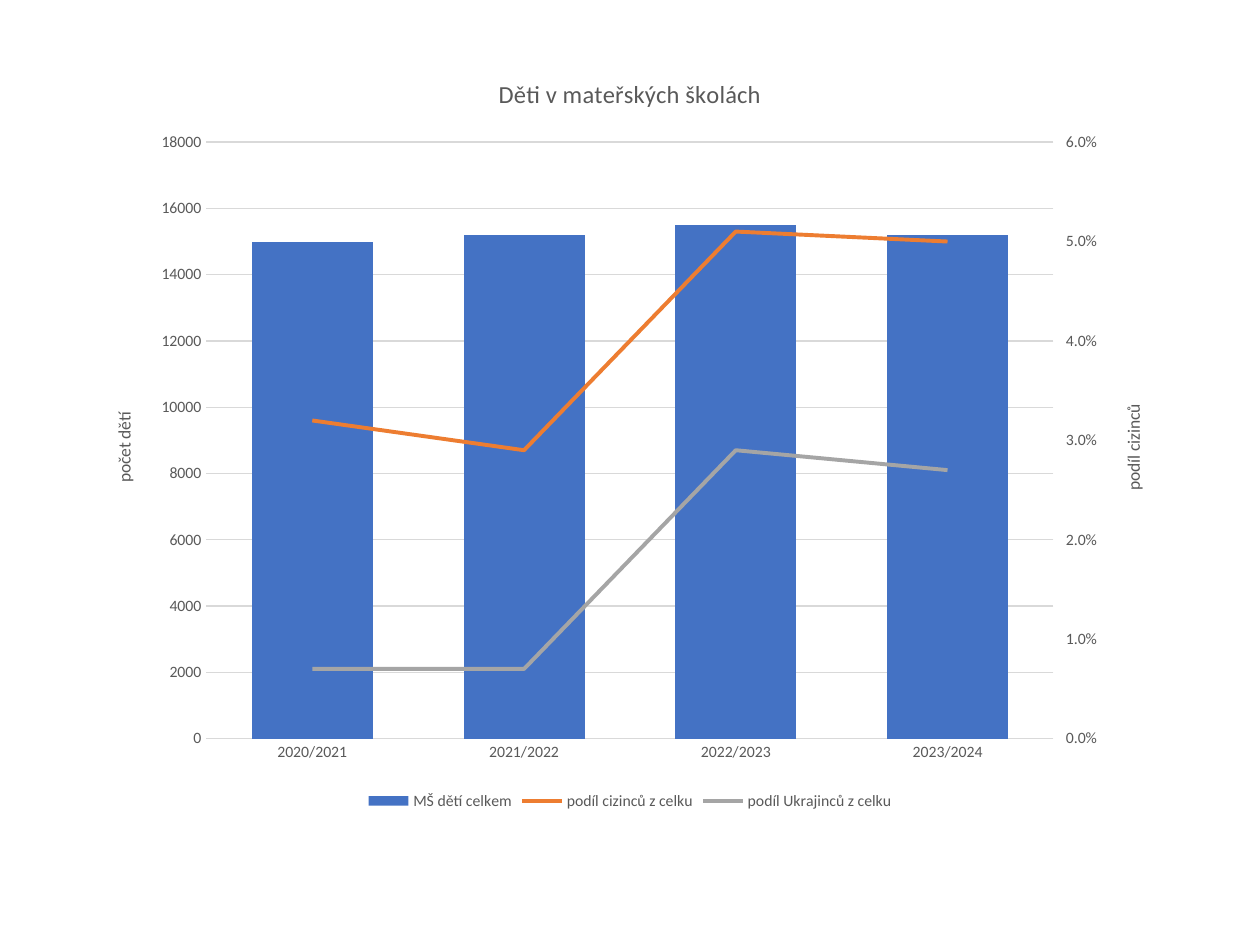
import copy

import pptx
import pptx.chart.axis
import pptx.chart.data
import pptx.dml.color
import pptx.enum.chart
import pptx.oxml
import pptx.oxml.ns
import pptx.util

Pt = pptx.util.Pt
qn = pptx.oxml.ns.qn
Tick = pptx.enum.chart.XL_TICK_MARK

SCHOOL_YEARS = ["2020/2021", "2021/2022", "2022/2023", "2023/2024"]
CHILDREN = ("MŠ dětí celkem", [15000, 15200, 15500, 15200], "4472C4")
SHARES = [
    ("podíl cizinců z celku", [0.032, 0.029, 0.051, 0.05], "ED7D31"),
    ("podíl Ukrajinců z celku", [0.007, 0.007, 0.029, 0.027], "A5A5A5"),
]


def rgb(hex_color):
    return pptx.dml.color.RGBColor.from_string(hex_color)


def chart_xml(tag, body):
    namespace = pptx.oxml.ns.nsdecls("c")
    return pptx.oxml.parse_xml(f"<c:{tag} {namespace}>{body}</c:{tag}>")


class ChartSlide:
    font_name = "Calibri"
    text_color = "595959"
    grid_color = "D9D9D9"

    def __init__(self, presentation):
        self.slide = presentation.slides.add_slide(presentation.slide_layouts[6])

    def style_font(self, font, size):
        font.name = self.font_name
        font.size = Pt(size)
        font.bold = False
        font.color.rgb = rgb(self.text_color)

    def style_line(self, line, color, width):
        line.color.rgb = rgb(color)
        line.width = Pt(width)

    def set_title(self, title, text, size):
        title.text_frame.text = text
        self.style_font(title.text_frame.paragraphs[0].runs[0].font, size)

    def style_value_axis(self, axis, title, maximum, step, number_format, tick):
        self.set_title(axis.axis_title, title, 10)
        body = axis.axis_title._element.find(".//" + qn("a:bodyPr"))
        body.set("rot", "-5400000")
        body.set("vert", "horz")
        axis.minimum_scale, axis.maximum_scale = 0, maximum
        axis.major_unit = step
        axis.major_tick_mark, axis.minor_tick_mark = tick, Tick.NONE
        axis.tick_labels.number_format = number_format
        axis.tick_labels.number_format_is_linked = False
        self.style_font(axis.tick_labels.font, 9)
        axis.format.line.fill.background()

    def add_children_chart(self, left, top, width, height):
        data = pptx.chart.data.CategoryChartData()
        data.categories = SCHOOL_YEARS
        data.add_series(*CHILDREN[:2], number_format="General")
        for name, values, _ in SHARES:
            data.add_series(name, values, number_format="0.0%")
        chart = self.slide.shapes.add_chart(
            pptx.enum.chart.XL_CHART_TYPE.COLUMN_CLUSTERED,
            Pt(left), Pt(top), Pt(width), Pt(height), data,
        ).chart
        self.style_font(chart.font, 10)
        self.set_title(chart.chart_title, "Děti v mateřských školách", 14)
        chart.has_legend = True
        chart.legend.position = pptx.enum.chart.XL_LEGEND_POSITION.BOTTOM
        chart.legend.include_in_layout = False
        self.style_font(chart.legend.font, 9)

        years_axis = chart.category_axis
        years_axis.major_tick_mark = years_axis.minor_tick_mark = Tick.NONE
        self.style_font(years_axis.tick_labels.font, 9)
        self.style_line(years_axis.format.line, self.grid_color, 0.75)

        count_axis = chart.value_axis
        self.style_value_axis(count_axis, "počet dětí", 18000, 2000, "General", Tick.NONE)
        self.style_line(count_axis.major_gridlines.format.line, self.grid_color, 0.75)

        columns = chart.plots[0]
        columns.gap_width, columns.overlap = 75, -25
        columns.vary_by_categories = False
        fill = columns.series[0].format.fill
        fill.solid()
        fill.fore_color.rgb = rgb(CHILDREN[2])

        self.move_shares_to_right_axis(chart)
        self.place_plot_area(chart, 0.11, 0.12, 0.78, 0.78)

    def move_shares_to_right_axis(self, chart):
        """Turn every series after the first into a line on a second value axis."""
        columns = chart.plots[0]._element
        lines = chart_xml("lineChart", '<c:grouping val="standard"/><c:varyColors val="0"/>')
        for series in columns.findall(qn("c:ser"))[1:]:
            for invert in series.findall(qn("c:invertIfNegative")):
                series.remove(invert)
            lines.append(series)
        years_id, share_id = "50001", "50002"
        for tag, value in (("marker", "1"), ("axId", years_id), ("axId", share_id)):
            mark = chart_xml(tag, "")
            mark.set("val", value)
            lines.append(mark)
        columns.addnext(lines)

        count_element = chart.value_axis._element
        share_element = copy.deepcopy(count_element)
        years_element = copy.deepcopy(chart.category_axis._element)
        count_element.addnext(share_element)
        share_element.addnext(years_element)
        for element, own_id, cross_id in (
            (share_element, share_id, years_id),
            (years_element, years_id, share_id),
        ):
            element.find(qn("c:axId")).set("val", own_id)
            element.find(qn("c:crossAx")).set("val", cross_id)
        share_element.find(qn("c:axPos")).set("val", "r")
        share_element.find(qn("c:crosses")).set("val", "max")
        pptx.chart.axis.CategoryAxis(years_element).visible = False
        share_axis = pptx.chart.axis.ValueAxis(share_element)
        share_axis.has_major_gridlines = False
        self.style_value_axis(share_axis, "podíl cizinců", 0.06, 0.01, "0.0%", Tick.OUTSIDE)

        for series, (_, _, color) in zip(chart.plots[1].series, SHARES):
            series.smooth = False
            series.marker.style = pptx.enum.chart.XL_MARKER_STYLE.NONE
            self.style_line(series.format.line, color, 2.25)

    def place_plot_area(self, chart, x, y, w, h):
        """Fix the inner plot area, in fractions of the chart."""
        plot_area = chart.plots[0]._element.getparent()
        for layout in plot_area.findall(qn("c:layout")):
            plot_area.remove(layout)
        sizes = "".join(
            f'<c:{tag} val="{value}"/>' for tag, value in zip("xywh", (x, y, w, h))
        )
        modes = '<c:layoutTarget val="inner"/><c:xMode val="edge"/><c:yMode val="edge"/>'
        plot_area.insert(
            0, chart_xml("layout", f"<c:manualLayout>{modes}{sizes}</c:manualLayout>")
        )


def main():
    presentation = pptx.Presentation()
    presentation.slide_width, presentation.slide_height = Pt(720), Pt(540)
    ChartSlide(presentation).add_children_chart(49.7, 28.8, 620.6, 437)
    presentation.save("out.pptx")


if __name__ == "__main__":
    main()
